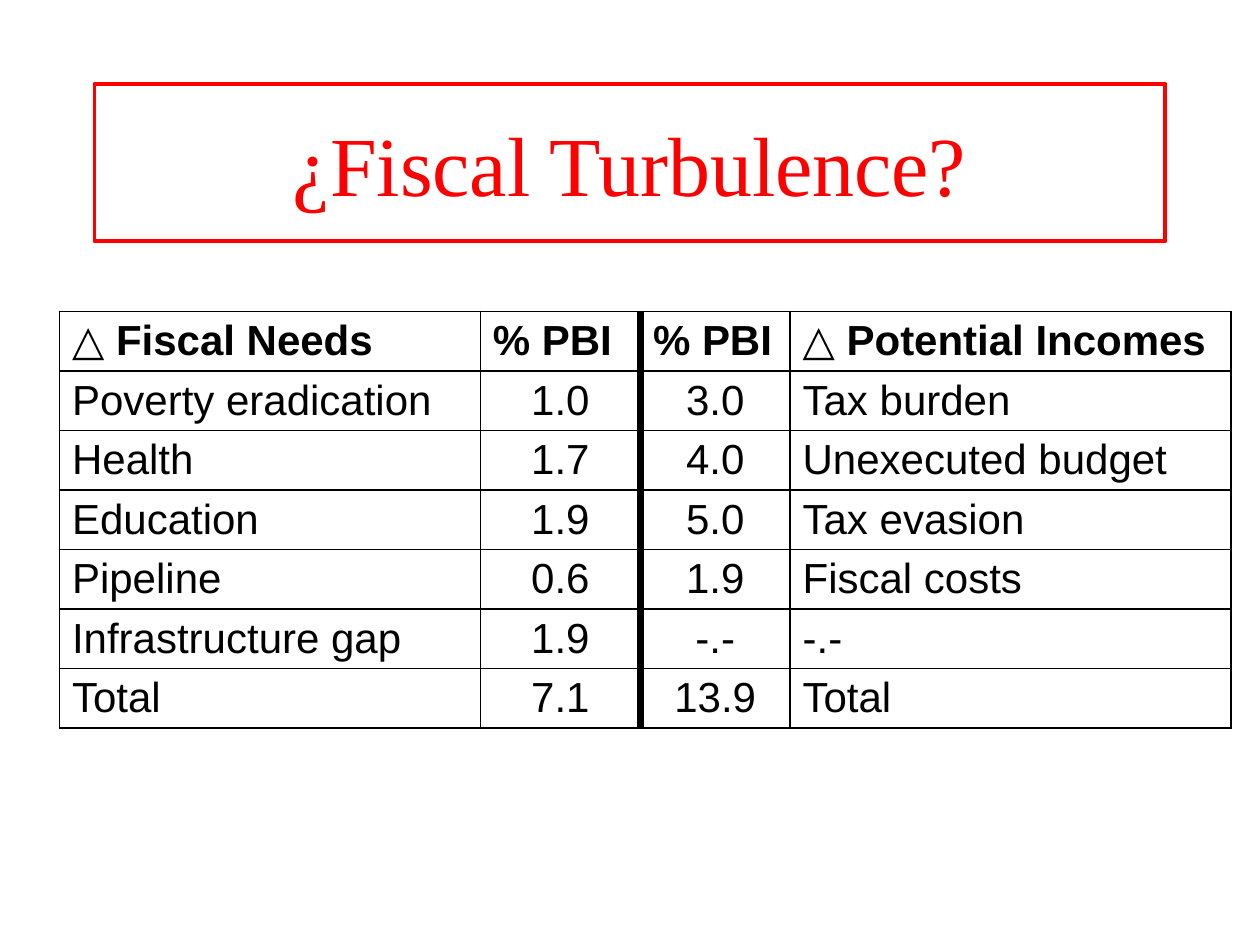
from lxml import etree
from pptx import Presentation
from pptx import util as u
from pptx.dml.color import RGBColor
from pptx.enum import text
from pptx.oxml import ns

RED = RGBColor(0xFF, 0x00, 0x00)
BLACK = RGBColor(0x00, 0x00, 0x00)

THIN, THICK = 1, 4.5
COLUMN_WIDTHS = [240.5, 91.5, 85.5, 252]
ROW_HEIGHT = 29.5
NUMBER_COLUMNS = (1, 2)
BUDGET = [
    ("△ Fiscal Needs", "% PBI", "% PBI", "△ Potential Incomes"),
    ("Poverty eradication", "1.0", "3.0", "Tax burden"),
    ("Health", "1.7", "4.0", "Unexecuted budget"),
    ("Education", "1.9", "5.0", "Tax evasion"),
    ("Pipeline", "0.6", "1.9", "Fiscal costs"),
    ("Infrastructure gap", "1.9", "-.-", "-.-"),
    ("Total", "7.1", "13.9", "Total"),
]


class SlideBuilder:
    title_font, title_size = "Times New Roman", 48
    table_font, table_size = "Arial", 24

    def __init__(self, slide):
        self.slide = slide

    def add_text(self, paragraph, words, font, size, color, bold=False):
        run = paragraph.add_run()
        run.text = words
        run.font.name = font
        run.font.size = u.Pt(size)
        run.font.bold = bold
        run.font.color.rgb = color

    def title(self, words, left, top, width, height):
        title = self.slide.shapes.title
        title.left, title.top = u.Pt(left), u.Pt(top)
        title.width, title.height = u.Pt(width), u.Pt(height)
        title.line.color.rgb = RED
        title.line.width = u.Pt(2.25)
        frame = title.text_frame
        frame.word_wrap = True
        frame.auto_size = text.MSO_AUTO_SIZE.NONE
        frame.vertical_anchor = text.MSO_ANCHOR.MIDDLE
        heading = frame.paragraphs[0]
        heading.alignment = text.PP_ALIGN.CENTER
        self.add_text(heading, words, self.title_font, self.title_size, RED)

    def border(self, cell, side, width):
        line = etree.SubElement(cell._tc.get_or_add_tcPr(), ns.qn(f"a:ln{side}"),
                                w=str(u.Pt(width)))
        fill = etree.SubElement(line, ns.qn("a:solidFill"))
        etree.SubElement(fill, ns.qn("a:srgbClr"), val=str(BLACK))

    def table(self, rows, left, top):
        """Draw the needs and incomes side by side, split by a thick rule."""
        table = self.slide.shapes.add_table(
            len(rows), len(COLUMN_WIDTHS), u.Pt(left), u.Pt(top),
            u.Pt(sum(COLUMN_WIDTHS)), u.Pt(ROW_HEIGHT * len(rows))).table
        table.first_row = table.horz_banding = False
        for column, width in zip(table.columns, COLUMN_WIDTHS):
            column.width = u.Pt(width)
        for r, entries in enumerate(rows):
            table.rows[r].height = u.Pt(ROW_HEIGHT)
            for c, entry in enumerate(entries):
                self.cell(table.cell(r, c), entry, c, is_header=r == 0)

    def cell(self, cell, entry, column, is_header):
        self.border(cell, "L", THICK if column == 2 else THIN)
        self.border(cell, "R", THICK if column == 1 else THIN)
        self.border(cell, "T", THIN)
        self.border(cell, "B", THIN)
        cell.fill.background()
        paragraph = cell.text_frame.paragraphs[0]
        if column in NUMBER_COLUMNS and not is_header:
            paragraph.alignment = text.PP_ALIGN.CENTER
        self.add_text(paragraph, entry, self.table_font, self.table_size, BLACK,
                      bold=is_header)


def main():
    deck = Presentation()
    deck.slide_width, deck.slide_height = u.Pt(720), u.Pt(540)
    builder = SlideBuilder(deck.slides.add_slide(deck.slide_layouts[5]))
    builder.title("¿Fiscal Turbulence?", 54, 48, 612, 90)
    builder.table(BUDGET, 34, 178)
    deck.save("out.pptx")


if __name__ == "__main__":
    main()
